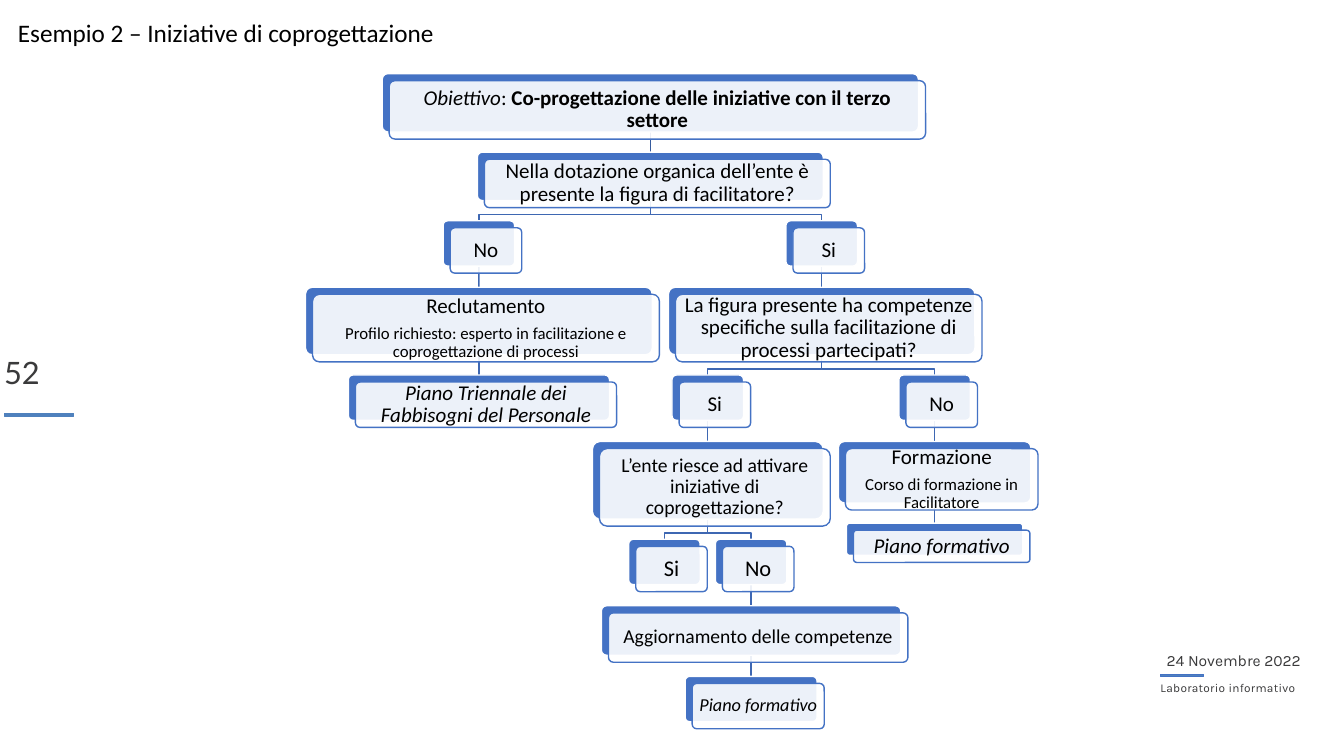
from dataclasses import dataclass

from lxml import etree
from pptx import Presentation
from pptx.dml.color import RGBColor
from pptx.enum.shapes import MSO_CONNECTOR, MSO_SHAPE
from pptx.enum.text import MSO_ANCHOR, PP_ALIGN
from pptx.oxml.ns import qn
from pptx.util import Inches, Pt

STRAIGHT = MSO_CONNECTOR.STRAIGHT
ROUNDED, RECTANGLE = MSO_SHAPE.ROUNDED_RECTANGLE, MSO_SHAPE.RECTANGLE
MIDDLE, CENTER = MSO_ANCHOR.MIDDLE, PP_ALIGN.CENTER

BLACK = RGBColor(0x00, 0x00, 0x00)
WHITE = RGBColor(0xFF, 0xFF, 0xFF)
BLUE = RGBColor(0x44, 0x72, 0xC4)
RULE_BLUE = RGBColor(0x4F, 0x81, 0xBD)
LINK_BLUE = RGBColor(0x3E, 0x67, 0xB2)
ROOT_LINK_BLUE = RGBColor(0x36, 0x5B, 0x9D)
GRAY = RGBColor(0x3A, 0x3A, 0x3B)

CARD_SHIFT = 0.07
BEND_DROP = 0.14
ANSWER_SIZE = (0.71, 0.45)


@dataclass
class Step:
    """A step of the decision tree, placed by its centre and top."""
    center: float
    top: float
    size: tuple
    paragraphs: list
    parent: str = ""
    inset: float = 0.06


def line(text, size=15, style=""):
    """Return a paragraph that holds a single run."""
    return [(text, size, style)]


STEPS = {
    "goal": Step(6.45, 0.73, (5.32, 0.58), [[
        ("Obiettivo", 15, "i"), (": ", 15, ""),
        ("Co-progettazione delle iniziative con il terzo settore", 15, "b")]]),
    "facilitator": Step(6.45, 1.51, (3.43, 0.48), [line(
        "Nella dotazione organica dell’ente è presente la figura di facilitatore?")], "goal"),
    "facilitator_no": Step(4.75, 2.19, ANSWER_SIZE, [line("No")], "facilitator"),
    "recruitment": Step(4.75, 2.85, (3.44, 0.67), [
        line("Reclutamento"),
        line("Profilo richiesto: esperto in facilitazione e coprogettazione di processi", 12),
    ], "facilitator_no"),
    "staff_plan": Step(4.75, 3.72, (2.59, 0.45), [line(
        "Piano Triennale dei Fabbisogni del Personale", style="i")], "recruitment"),
    "facilitator_yes": Step(8.15, 2.19, ANSWER_SIZE, [line("Si")], "facilitator"),
    "skills": Step(8.15, 2.85, (3.04, 0.67), [line(
        "La figura presente ha competenze specifiche sulla facilitazione di "
        "processi partecipati?")], "facilitator_yes"),
    "skills_yes": Step(7.02, 3.72, ANSWER_SIZE, [line("Si")], "skills"),
    "initiatives": Step(7.02, 4.38, (2.29, 0.77), [line(
        "L’ente riesce ad attivare iniziative di coprogettazione?", 14)], "skills_yes"),
    "initiatives_yes": Step(6.59, 5.35, ANSWER_SIZE, [line("Si", 16)], "initiatives"),
    "initiatives_no": Step(7.45, 5.35, ANSWER_SIZE, [line("No", 16)], "initiatives"),
    "update": Step(7.45, 6.01, (2.97, 0.49), [line(
        "Aggiornamento delle competenze", 14)], "initiatives_no"),
    "update_plan": Step(7.45, 6.71, (1.31, 0.45), [line(
        "Piano formativo", 13, "i")], "update", 0.05),
    "skills_no": Step(9.27, 3.72, ANSWER_SIZE, [line("No")], "skills"),
    "training": Step(9.27, 4.38, (1.91, 0.61), [
        line("Formazione"), line("Corso di formazione in Facilitatore", 12)], "skills_no"),
    "training_plan": Step(9.27, 5.19, (1.75, 0.32), [line(
        "Piano formativo", style="i")], "training"),
}


def format_run(run, font_name, size, color):
    """Give a run its font, size and colour."""
    run.font.name = font_name
    run.font.size = Pt(size)
    run.font.color.rgb = color


def set_insets(frame, inset):
    """Set the same margin on all four sides of a text frame."""
    frame.margin_left = frame.margin_right = Inches(inset)
    frame.margin_top = frame.margin_bottom = Inches(inset)


def add_block(slide, kind, box, fill, outline, weight):
    """Add a filled and outlined shape."""
    block = slide.shapes.add_shape(kind, *map(Inches, box))
    block.shadow.inherit = False
    block.fill.solid()
    block.fill.fore_color.rgb = fill
    block.line.color.rgb = outline
    block.line.width = Pt(weight)
    return block


def write_step(frame, step):
    """Write the paragraphs of a step into its card."""
    frame.word_wrap = True
    frame.vertical_anchor = MIDDLE
    set_insets(frame, step.inset)
    for index, runs in enumerate(step.paragraphs):
        paragraph = frame.add_paragraph() if index else frame.paragraphs[0]
        paragraph.alignment = CENTER
        paragraph.line_spacing = 0.9
        paragraph.space_after = Pt(5)
        for text, size, style in runs:
            run = paragraph.add_run()
            run.text = text
            format_run(run, "Calibri", size, BLACK)
            run.font.italic = style == "i"
            run.font.bold = style == "b"


def add_step(slide, step):
    """Draw a step as a blue card under a translucent white one."""
    left = step.center - step.size[0] / 2
    backing = add_block(slide, ROUNDED, (left, step.top, *step.size), BLUE, WHITE, 1)
    front = add_block(slide, ROUNDED, (left + CARD_SHIFT, step.top + CARD_SHIFT, *step.size),
                      WHITE, BLUE, 1)
    backing.adjustments[0] = front.adjustments[0] = 0.1
    tint = front.fill._xPr.find(qn("a:solidFill"))[0]
    etree.SubElement(tint, qn("a:alpha")).set("val", "90000")
    write_step(front.text_frame, step)
    return backing


def add_link(slide, parent, child, parent_card, child_card, color):
    """Link a step to the one below, behind all cards."""
    bottom = parent.top + parent.size[1]
    if parent.center == child.center:
        link = slide.shapes.add_connector(STRAIGHT, 0, 0, 0, 0)
        link.begin_connect(parent_card, 2)
        link.end_connect(child_card, 0)
        etree.SubElement(link._element.spPr, qn("a:effectLst"))
    else:
        bend = bottom + BEND_DROP
        builder = slide.shapes.build_freeform(Inches(parent.center), Inches(bottom))
        corners = [(parent.center, bend), (child.center, bend), (child.center, child.top)]
        builder.add_line_segments([(Inches(x), Inches(y)) for x, y in corners], close=False)
        link = builder.convert_to_shape()
        link.fill.background()
        link.shadow.inherit = False
    link.line.color.rgb = color
    link.line.width = Pt(1)
    slide.shapes._spTree.insert(2, link._element)


def add_label(slide, box, text, font_name, size, color, spacing, inset=0):
    """Add a one-line text box and return it."""
    label = slide.shapes.add_textbox(*map(Inches, box))
    frame = label.text_frame
    frame.word_wrap = True
    set_insets(frame, inset)
    frame.text = text
    frame.paragraphs[0].line_spacing = spacing
    format_run(frame.paragraphs[0].runs[0], font_name, size, color)
    return label


def main():
    """Build the slide with the decision tree."""
    deck = Presentation()
    deck.slide_width, deck.slide_height = Inches(13.33), Inches(7.5)
    slide = deck.slides.add_slide(deck.slide_layouts[6])

    title = add_label(slide, (0.08, -0.03, 11.5, 0.74),
                      "Esempio 2 – Iniziative di coprogettazione", "Calibri", 18, BLACK, 0.9, 0.1)
    title.text_frame.vertical_anchor = MIDDLE

    cards = {name: add_step(slide, step) for name, step in STEPS.items()}
    for name, step in STEPS.items():
        if step.parent:
            color = ROOT_LINK_BLUE if step.parent == "goal" else LINK_BLUE
            add_link(slide, STEPS[step.parent], step, cards[step.parent], cards[name], color)

    add_block(slide, RECTANGLE, (11.51, 6.69, 0.43, 0.02), RULE_BLUE, BLUE, 0.75)
    add_label(slide, (11.57, 6.43, 1.59, 0.2), "24 Novembre 2022", "Karla", 11.2, GRAY, Pt(15.6))
    event = add_label(slide, (11.51, 6.74, 1.59, 0.14), "Laboratorio informativo",
                      "Karla", 8.5, GRAY, Pt(11.1))
    event.text_frame.paragraphs[0].runs[0].font._element.set("spc", "20")
    add_label(slide, (0.04, 3.54, 0.49, 0.34), "52", "Lato", 22, GRAY, Pt(24.2))
    add_block(slide, RECTANGLE, (0.04, 4.1, 0.69, 0.03), RULE_BLUE, RULE_BLUE, 0.75)

    deck.save("out.pptx")


if __name__ == "__main__":
    main()
